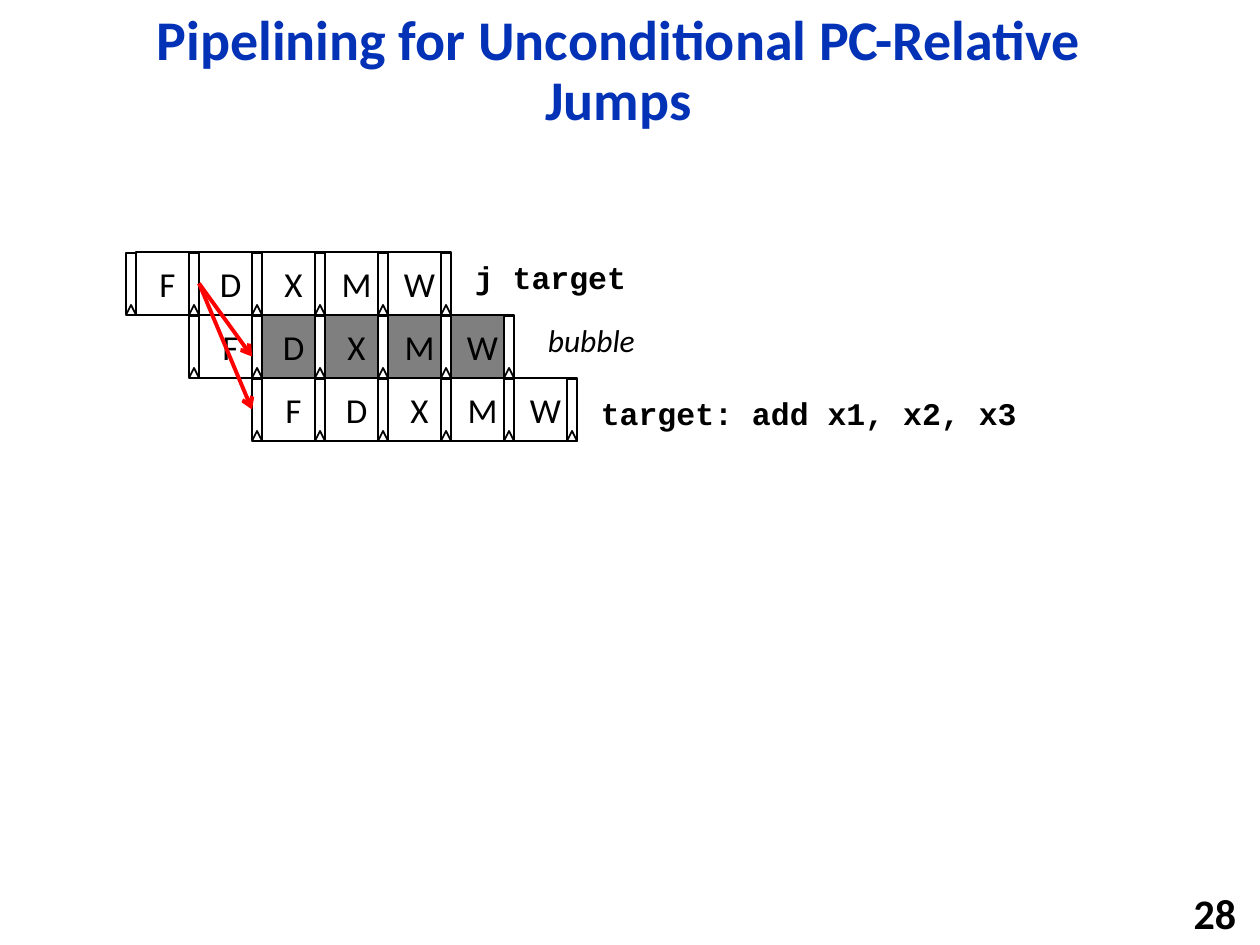
from pptx import Presentation
from pptx.dml.color import RGBColor
from pptx.enum.shapes import MSO_CONNECTOR, MSO_SHAPE
from pptx.enum.text import MSO_ANCHOR, MSO_AUTO_SIZE, PP_ALIGN
from pptx.oxml.ns import qn
from pptx.util import Inches, Pt
from lxml.etree import SubElement

COLORS = {"title": "0332B7", "ink": "000000", "stage": "FFFFFF",
          "bubble": "7F7F7F", "arrow": "FF0000"}
STAGES = "FDXMW"
LEFT, TOP = 1, 2
STEP = 0.5            # one clock cycle across, one instruction down
REGISTER = 0.08       # width of a pipeline register
REGISTER_LENGTH = 0.49


def color(name):
    return RGBColor.from_string(COLORS[name])


def set_font(paragraph, size, name="Calibri", ink="ink", bold=False, italic=False):
    font = paragraph.font
    font.size, font.name = Pt(size), name
    font.bold, font.italic = bold, italic
    font.color.rgb = color(ink)


def add_title(slide, text):
    title = slide.shapes.title
    title.left, title.top = Inches(0.92), Inches(0.17)
    title.width, title.height = Inches(7.98), Inches(0.81)
    frame = title.text_frame
    frame.text = text
    frame.auto_size = MSO_AUTO_SIZE.NONE
    frame.vertical_anchor = MSO_ANCHOR.MIDDLE
    heading = frame.paragraphs[0]
    heading.alignment = PP_ALIGN.CENTER
    heading.line_spacing = 0.9
    set_font(heading, 32, ink="title", bold=True)


def add_label(slide, text, left, top, width, height=0.4, size=18,
              align=PP_ALIGN.LEFT, anchor=MSO_ANCHOR.TOP, **style):
    label = slide.shapes.add_textbox(Inches(left), Inches(top),
                                     Inches(width), Inches(height))
    frame = label.text_frame
    frame.word_wrap = False
    frame.vertical_anchor = anchor
    frame.text = text
    frame.paragraphs[0].alignment = align
    set_font(frame.paragraphs[0], size, **style)


def add_outlined(slide, kind, left, top, width, height, fill="stage"):
    shape = slide.shapes.add_shape(kind, Inches(left), Inches(top),
                                   Inches(width), Inches(height))
    shape.shadow.inherit = False
    shape.fill.solid()
    shape.fill.fore_color.rgb = color(fill)
    shape.line.color.rgb = color("ink")
    shape.line.width = Pt(1)
    return shape


def add_stage(slide, letter, left, top, fill):
    stage = add_outlined(slide, MSO_SHAPE.RECTANGLE, left, top, STEP, STEP, fill)
    frame = stage.text_frame
    frame.margin_left = frame.margin_right = 0
    frame.margin_top = frame.margin_bottom = 0
    frame.vertical_anchor = MSO_ANCHOR.MIDDLE
    frame.text = letter
    frame.paragraphs[0].alignment = PP_ALIGN.CENTER
    set_font(frame.paragraphs[0], 20)


def add_register(slide, left, top):
    # A flat bar turned upright about its centre, with the clock mark at its foot
    bar = add_outlined(slide, MSO_SHAPE.RECTANGLE,
                       left + (REGISTER - REGISTER_LENGTH) / 2,
                       top + (STEP - REGISTER) / 2, REGISTER_LENGTH, REGISTER)
    bar.rotation = 270
    add_outlined(slide, MSO_SHAPE.ISOSCELES_TRIANGLE,
                 left, top + STEP - REGISTER, REGISTER, REGISTER)


def add_instruction(slide, row, fills):
    left, top = LEFT + row * STEP, TOP + row * STEP
    add_register(slide, left, top)
    for column, (letter, fill) in enumerate(zip(STAGES, fills)):
        add_stage(slide, letter, left + column * STEP + REGISTER, top, fill)
        add_register(slide, left + (column + 1) * STEP, top)


def add_arrow(slide, start, end):
    arrow = slide.shapes.add_connector(MSO_CONNECTOR.STRAIGHT,
                                       *map(Inches, start + end))
    arrow.line.color.rgb = color("arrow")
    arrow.line.width = Pt(2.25)
    SubElement(arrow.line._get_or_add_ln(), qn("a:tailEnd"), type="arrow")
    SubElement(arrow._element.spPr, qn("a:effectLst"))


def main():
    prs = Presentation()
    prs.slide_width, prs.slide_height = Inches(10), Inches(7.5)
    slide = prs.slides.add_slide(prs.slide_layouts[5])

    # Title and page number
    add_title(slide, "Pipelining for Unconditional PC-Relative Jumps")
    add_label(slide, "28", 7.83, 7.08, 2.08, 0.32, size=24, bold=True,
              align=PP_ALIGN.RIGHT, anchor=MSO_ANCHOR.MIDDLE)

    # Pipeline: the jump, the killed fetch, the target
    normal = ["stage"] * 5
    killed = ["stage"] + ["bubble"] * 4
    for row, fills in enumerate([normal, killed, normal]):
        add_instruction(slide, row, fills)

    # Instruction labels
    code = {"name": "Courier New", "bold": True}
    add_label(slide, "j target", 3.67, 2, 1.41, **code)
    add_label(slide, "bubble", 4.25, 2.5, 0.96, italic=True)
    add_label(slide, "target: add x1, x2, x3", 4.67, 3.08, 3.53, **code)

    # Redirects out of the jump's decode stage
    for end_y in (3.25, 2.83):
        add_arrow(slide, (1.58, 2.25), (2, end_y))

    prs.save("out.pptx")


if __name__ == "__main__":
    main()
